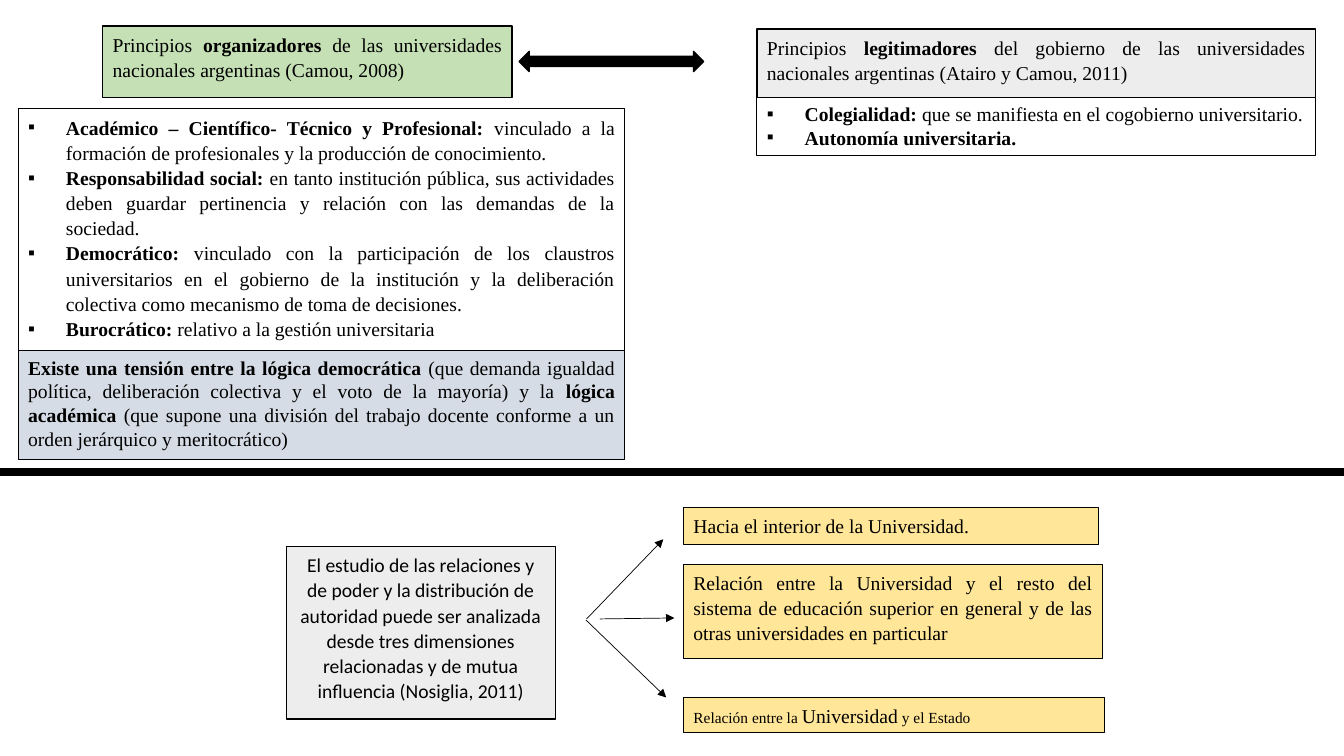
"""Build a slide on the organising and legitimising principles of universities."""
from dataclasses import dataclass

from lxml import etree
from pptx import Presentation
from pptx.dml.color import RGBColor
from pptx.enum.shapes import MSO_CONNECTOR, MSO_SHAPE
from pptx.enum.text import MSO_ANCHOR, MSO_AUTO_SIZE, PP_ALIGN
from pptx.oxml.ns import qn
from pptx.slide import Slide
from pptx.util import Pt

RECTANGLE = MSO_SHAPE.RECTANGLE
DOUBLE_ARROW = MSO_SHAPE.LEFT_RIGHT_ARROW
STRAIGHT = MSO_CONNECTOR.STRAIGHT
JUSTIFY = PP_ALIGN.JUSTIFY
CENTER = PP_ALIGN.CENTER

BLACK = RGBColor(0x00, 0x00, 0x00)
WHITE = RGBColor(0xFF, 0xFF, 0xFF)
GREEN = RGBColor(0xC5, 0xE0, 0xB4)
GREY = RGBColor(0xED, 0xED, 0xED)
BLUE = RGBColor(0xD6, 0xDC, 0xE5)
YELLOW = RGBColor(0xFF, 0xE6, 0x99)

SERIF = "Times New Roman"
SANS = "Calibri"
BULLET_INDENT = 27
FRAME_FORMAT = {
    "word_wrap": True,
    "auto_size": MSO_AUTO_SIZE.NONE,
    "vertical_anchor": MSO_ANCHOR.TOP,
    "margin_left": Pt(7.2),
    "margin_right": Pt(7.2),
    "margin_top": Pt(3.6),
    "margin_bottom": Pt(3.6),
}


@dataclass(frozen=True)
class Run:
    """A stretch of text with one format."""
    text: str
    bold: bool = False
    size: float = 14


@dataclass(frozen=True)
class Box:
    """A filled, outlined shape with its paragraphs."""
    left: float
    top: float
    width: float
    height: float
    fill: RGBColor
    outline: float = 0.75
    paragraphs: tuple[tuple[Run, ...], ...] = ()
    bulleted: bool = False
    spacing: float = 1.07
    align: PP_ALIGN = JUSTIFY
    font: str = SERIF
    preset: MSO_SHAPE = RECTANGLE


@dataclass(frozen=True)
class Arrow:
    """A thin line that ends in an arrowhead."""
    start_x: float
    start_y: float
    end_x: float
    end_y: float


ORGANIZING = (
    (Run("Académico – Científico- Técnico y Profesional:", True),
     Run(" vinculado a la formación de profesionales y la producción de conocimiento.")),
    (Run("Responsabilidad social:", True),
     Run(" en tanto institución pública, sus actividades deben guardar pertinencia y "
         "relación con las demandas de la sociedad.")),
    (Run("Democrático: ", True),
     Run("vinculado con la participación de los claustros universitarios en el gobierno "
         "de la institución y la deliberación colectiva como mecanismo de toma de decisiones.")),
    (Run("Burocrático:", True), Run(" relativo a la gestión universitaria")),
)
LEGITIMIZING = (
    (Run("Colegialidad: ", True), Run("que se manifiesta en el cogobierno universitario.")),
    (Run("Autonomía universitaria.", True),),
)
TENSION = (
    Run("Existe una tensión entre la lógica democrática ", True),
    Run("(que demanda igualdad política, deliberación colectiva y el voto de la mayoría) y la "),
    Run("lógica académica", True),
    Run(" (que supone una división del trabajo docente conforme a un orden jerárquico "
        "y meritocrático)"),
)
STUDY = Run("El estudio de las relaciones y de poder y la distribución de autoridad puede ser "
            "analizada desde tres dimensiones relacionadas y de mutua influencia (Nosiglia, 2011)")
SYSTEM = Run("Relación entre la Universidad y el resto del sistema de educación superior en "
             "general y de las otras universidades en particular")
STATE = (Run("Relación entre la ", size=11), Run("Universidad"), Run(" y el Estado", size=11))

BOXES = (
    Box(488.2, 498.2, 301, 25.2, YELLOW, paragraphs=(STATE,)),
    Box(488.2, 403.2, 299.5, 67, YELLOW, paragraphs=((SYSTEM,),)),
    Box(488.2, 362.7, 296.6, 26.2, YELLOW,
        paragraphs=((Run("Hacia el interior de la Universidad."),),)),
    Box(204.5, 390.4, 192.2, 123.1, GREY, 1, ((STUDY,),), align=CENTER, font=SANS),
    Box(73.4, 18.7, 292.3, 51.1, GREEN, 1,
        ((Run("Principios "), Run("organizadores", True),
          Run(" de las universidades nacionales argentinas (Camou, 2008)")),)),
    Box(13, 77.8, 433.4, 172.8, WHITE, paragraphs=ORGANIZING, bulleted=True),
    Box(13, 250.6, 433.4, 77.8, BLUE, paragraphs=(TENSION,), spacing=1),
    Box(540.7, 20.7, 398.9, 49, GREY, 1,
        ((Run("Principios "), Run("legitimadores", True),
          Run(" del gobierno de las universidades nacionales argentinas "
              "(Atairo y Camou, 2011)")),)),
    Box(370.8, 36.7, 131.8, 14.4, BLACK, 1, preset=DOUBLE_ARROW),
    Box(540.7, 69.4, 398.9, 41.8, WHITE, paragraphs=LEGITIMIZING, bulleted=True, spacing=1),
    Box(0, 334.8, 960, 5, BLACK, 1),
)
DIMENSION_ARROWS = (
    Arrow(419, 442.1, 473.8, 385.2),
    Arrow(428.4, 442.1, 481.7, 441.4),
    Arrow(418.5, 442.8, 475.9, 498.2),
)


def draw_box(slide: Slide, box: Box) -> None:
    """Draw a box and fill in its text."""
    shape = slide.shapes.add_shape(
        box.preset, Pt(box.left), Pt(box.top), Pt(box.width), Pt(box.height))
    shape.shadow.inherit = False
    shape.fill.solid()
    shape.fill.fore_color.rgb = box.fill
    shape.line.color.rgb = BLACK
    shape.line.width = Pt(box.outline)
    frame = shape.text_frame
    for name, value in FRAME_FORMAT.items():
        setattr(frame, name, value)
    for index, runs in enumerate(box.paragraphs):
        paragraph = frame.add_paragraph() if index else frame.paragraphs[0]
        paragraph.alignment = box.align
        paragraph.line_spacing = box.spacing
        if box.bulleted:
            properties = paragraph._p.get_or_add_pPr()
            properties.set("marL", str(Pt(BULLET_INDENT)))
            properties.set("indent", str(-Pt(BULLET_INDENT)))
            etree.SubElement(properties, qn("a:buFont"), typeface=SERIF)
            etree.SubElement(properties, qn("a:buChar"), char="▪")
        for run in runs:
            piece = paragraph.add_run()
            piece.text = run.text
            font_format = {"name": box.font, "size": Pt(run.size), "bold": run.bold}
            for name, value in font_format.items():
                setattr(piece.font, name, value)
            piece.font.color.rgb = BLACK


def draw_arrow(slide: Slide, arrow: Arrow) -> None:
    """Draw a thin line with a triangular head."""
    connector = slide.shapes.add_connector(
        STRAIGHT, Pt(arrow.start_x), Pt(arrow.start_y), Pt(arrow.end_x), Pt(arrow.end_y))
    connector.line.color.rgb = BLACK
    connector.line.width = Pt(0.5)
    etree.SubElement(connector.line._get_or_add_ln(), qn("a:tailEnd"), type="triangle")
    etree.SubElement(connector._element.spPr, qn("a:effectLst"))


def main() -> None:
    """Build and save the presentation."""
    presentation = Presentation()
    presentation.slide_width = Pt(960)
    presentation.slide_height = Pt(540)
    slide = presentation.slides.add_slide(presentation.slide_layouts[6])
    for box in BOXES:
        draw_box(slide, box)
    for arrow in DIMENSION_ARROWS:
        draw_arrow(slide, arrow)
    presentation.save("out.pptx")


if __name__ == "__main__":
    main()
